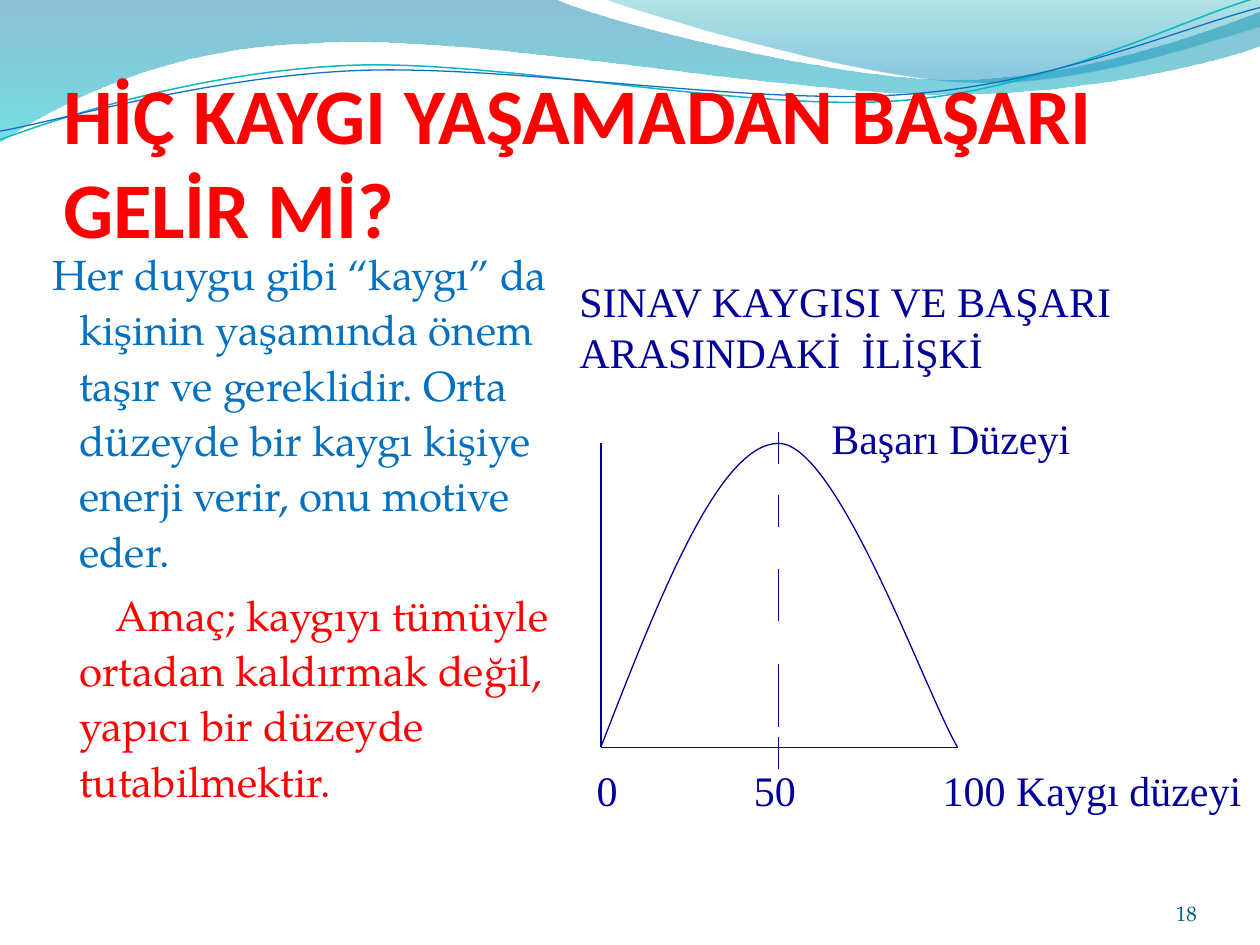
from lxml.etree import SubElement
from pptx import Presentation
from pptx.dml.color import RGBColor
from pptx.enum.shapes import MSO_CONNECTOR as Link
from pptx.enum.text import MSO_ANCHOR as Anchor, MSO_AUTO_SIZE as Auto, PP_ALIGN as Align
from pptx.oxml.ns import qn
from pptx.util import Pt

HUES = {
    "red": "FF0000", "blue": "0070C0", "navy": "000099", "slate": "045D75",
    "teal": "0AB8BF", "royal": "0F6FC6", "deep": "0074A1", "aqua": "00C6CF",
    "sea": "00A1A9", "sky": "008BBF",
}
SERIF, BOOK, SANS = "Times New Roman", "TeX Gyre Pagella", "Calibri"

TITLE = "HİÇ KAYGI YAŞAMADAN BAŞARI GELİR Mİ?"
BODY = [
    ("Her duygu gibi “kaygı” da kişinin yaşamında önem taşır ve gereklidir. "
     "Orta düzeyde bir kaygı kişiye enerji verir, onu motive eder.", "blue", -15.3),
    ("Amaç; kaygıyı tümüyle ortadan kaldırmak değil, yapıcı bir düzeyde "
     "tutabilmektir.", "red", 21),
]
LABELS = [
    (["SINAV KAYGISI VE BAŞARI", "ARASINDAKİ  İLİŞKİ"], (324, 154.1, 331.2, 64.8), 7.2),
    (["0\t50\t100 Kaygı düzeyi"], (303.8, 433.4, 416.9, 36.7), 37.2),
    (["Başarı Düzeyi"], (468, 232.4, 151.2, 36), 7.2),
]
TABS = [89.8, 197.7]
WAVES = [
    ([(0, 0), (316.8, -0.7), (342.7, 12.2, 478.1, 45.4, 545.8, 45.4),
      (614.2, 45.4, 689.8, 18.7, 720, 6.5), (720.7, 25.9),
      (707.8, 31.7, 626.4, 54.7, 537.1, 54), (447.8, 54, 275, 20.2, 185, 24.5),
      (92.9, 25.9, 33.1, 59.8, -0.7, 81.4)],
     [(0, "deep", 45), (1, "aqua", 55)]),
    ([(344.9, -0.7), (366.5, 7.9, 491, 44.6, 553.7, 46.8),
      (616.3, 49.7, 691.9, 23, 720, 15.1), (720, 0)],
     [(0, "sea", 30), (0.8, "sky", 45)]),
]
CURVES = [
    ([(0, 79.9), (34.6, 67, 113.8, 41, 199.4, 37.4), (284.4, 33.8, 427, 64.1, 513.4, 57.6),
      (599.8, 51.1, 675.4, 10.8, 718.6, -1.4)], "teal", 0.85),
    ([(0, 74.9), (33.8, 69.1, 118.1, 43.9, 203.8, 40.3), (290.2, 36.7, 429.8, 60.5, 516.2, 54),
      (601.9, 48.2, 677.5, 15.1, 720, 4.3)], "royal", 0.75),
]
LEFT, RIGHT, MID, TOP, BASE = 343.4, 547.2, 445, 253.4, 427
BELL = [(LEFT, BASE), (377.3, 339.8, 411.1, TOP, MID, TOP),
        (478.8, TOP, 529.9, 398.2, RIGHT, BASE)]
AXES = [(LEFT, TOP, LEFT, BASE), (LEFT, BASE, RIGHT, BASE)]
DASHES = [(421.2, 439.2), (247, 265), (283, 301), (325.4, 355), (379.4, 415.4)]


def tint(name):
    """Return the named colour."""
    return RGBColor.from_string(HUES[name])


def draw(shapes, path, close=False):
    """Add an outline of corners and cubic curves without fill or shadow."""
    dots = [(Pt(x), Pt(y)) for seg in path for x, y in zip(seg[::2], seg[1::2])]
    pen = shapes.build_freeform(*dots[0])
    pen.add_line_segments(dots[1:], close=close)
    form = pen.convert_to_shape()
    steps = iter(list(form._element.iter(qn("a:lnTo"))))
    for seg in path[1:]:
        step = next(steps)
        if len(seg) == 6:
            curve = step.getparent().makeelement(qn("a:cubicBezTo"))
            step.addprevious(curve)
            for old in (step, next(steps), next(steps)):
                curve.append(old[0])
                old.getparent().remove(old)
    form.shadow.inherit = False
    form.fill.background()
    return form


def ink(form, hue, width=0.75):
    """Set the line colour and width."""
    form.line.color.rgb = tint(hue)
    form.line.width = Pt(width)


def wave(shapes, path, stops):
    """Add a wave with a see-through gradient running downwards."""
    form = draw(shapes, path, True)
    form.line.fill.background()
    form.fill.gradient()
    form.fill.gradient_angle = 270
    for stop, (pos, hue, _) in zip(form.fill.gradient_stops, stops):
        stop.position = pos
        stop.color.rgb = tint(hue)
    marks = list(form._element.spPr.iter(qn("a:srgbClr")))
    for mark, (_, _, alpha) in zip(marks, stops):
        SubElement(mark, qn("a:alpha")).set("val", str(alpha * 1000))


def rule(shapes, x1, y1, x2, y2):
    """Add a thin straight line."""
    line = shapes.add_connector(Link.STRAIGHT, Pt(x1), Pt(y1), Pt(x2), Pt(y2))
    ink(line, "navy")
    SubElement(line._element.spPr, qn("a:effectLst"))


def setup(form, box, pads=(0, 0, 0, 0), anchor=Anchor.TOP):
    """Place a text shape and return its frame."""
    form.left, form.top, form.width, form.height = map(Pt, box)
    frame = form.text_frame
    frame.word_wrap = True
    frame.auto_size = Auto.NONE
    frame.vertical_anchor = anchor
    (frame.margin_left, frame.margin_top,
     frame.margin_right, frame.margin_bottom) = map(Pt, pads)
    return frame


def write(frame, i, text, font, size, hue, bold=False, align=Align.LEFT):
    """Write paragraph i as one run."""
    para = frame.add_paragraph() if i else frame.paragraphs[0]
    para.alignment = align
    run = para.add_run()
    run.text = text
    run.font.name, run.font.size, run.font.bold = font, Pt(size), bold
    run.font.color.rgb = tint(hue)
    return para


def main():
    """Build the slide and save it."""
    deck = Presentation()
    deck.slide_width, deck.slide_height = Pt(720), Pt(540)
    slide = deck.slides.add_slide(deck.slide_layouts[5])
    shapes = slide.shapes

    for path, stops in WAVES:
        wave(shapes, path, stops)
    for path, hue, width in CURVES:
        ink(draw(shapes, path), hue, width)

    title = shapes.title
    shapes._spTree.append(title._element)
    frame = setup(title, (36, 55.4, 648, 90), (0, 3.6, 0, 0), Anchor.BOTTOM)
    write(frame, 0, TITLE, SANS, 45, "red", True)

    def panel(*args):
        return setup(shapes.add_textbox(0, 0, 0, 0), *args)

    frame = panel((16.6, 135.4, 314.6, 342), (7.2, 3.6, 7.2, 3.6))
    for i, (text, hue, dent) in enumerate(BODY):
        para = write(frame, i, text, BOOK, 24, hue)
        para.line_spacing = 1.1
        para.space_before = Pt(4.8)
        props = para._p.get_or_add_pPr()
        props.set("marL", str(Pt(21.6)))
        props.set("indent", str(Pt(dent)))

    frame = panel((624.2, 500.4, 59.8, 28.8), (0, 0, 0, 0), Anchor.BOTTOM)
    write(frame, 0, "18", BOOK, 12, "slate", align=Align.RIGHT)

    for lines, box, pad in LABELS:
        frame = panel(box, (pad, 3.6, 0, 3.6))
        for i, text in enumerate(lines):
            para = write(frame, i, text, SERIF, 24, "navy")
            if "\t" in text:
                tabs = SubElement(para._p.get_or_add_pPr(), qn("a:tabLst"))
                for pos in TABS:
                    tab = SubElement(tabs, qn("a:tab"))
                    tab.set("pos", str(Pt(pos)))
                    tab.set("algn", "l")

    ink(draw(shapes, BELL), "navy")
    for ends in AXES + [(MID, a, MID, b) for a, b in DASHES]:
        rule(shapes, *ends)

    deck.save("out.pptx")


if __name__ == "__main__":
    main()
